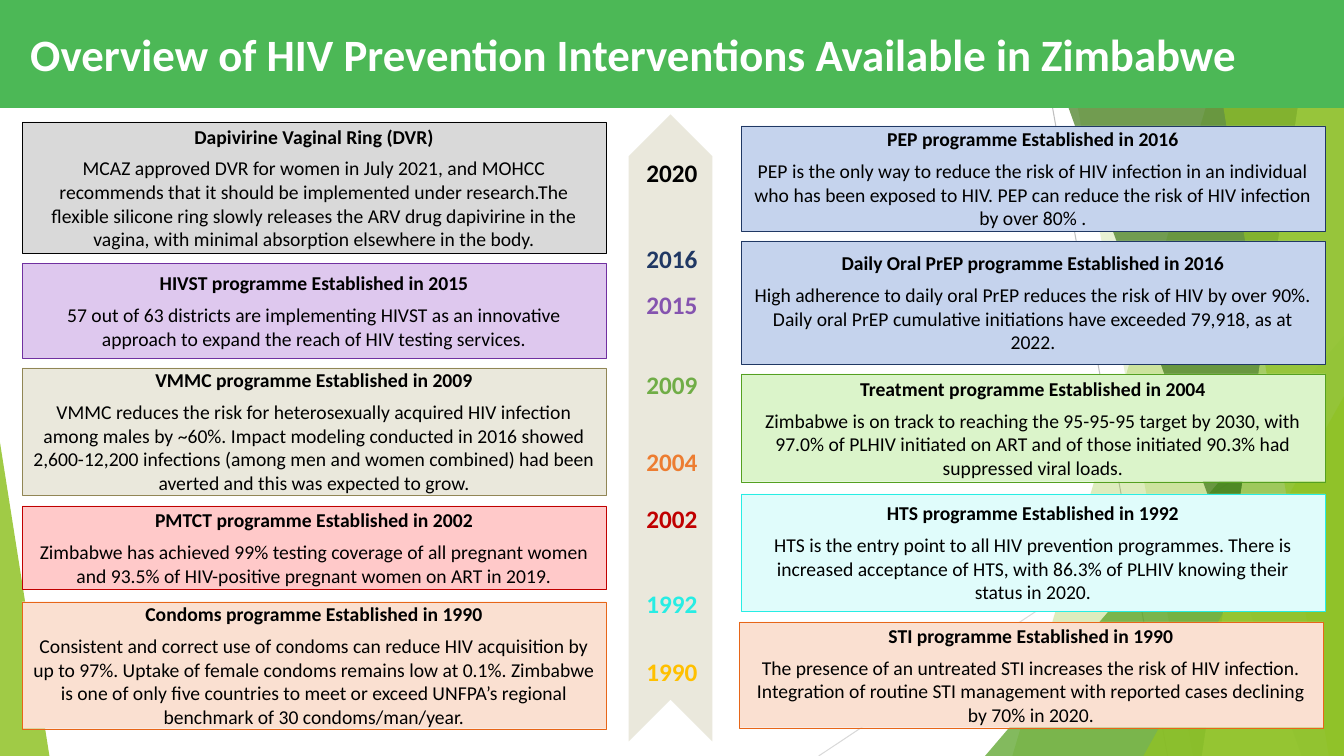
from lxml import etree
from pptx import Presentation
from pptx.dml.color import RGBColor
from pptx.enum.shapes import MSO_CONNECTOR, MSO_SHAPE as SHAPE
from pptx.enum.text import MSO_ANCHOR as ANCHOR, MSO_AUTO_SIZE, PP_ALIGN as ALIGN
from pptx.oxml.ns import qn
from pptx.util import Inches, Pt

FONT = "Calibri"
BEIGE = "EAE8DC"
CARD_W = 5.79

LINES = [
    (10.25, 0, 11.58, 7.5, "BFBFBF"),
    (13.33, 4.03, 8.12, 7.5, "D9D9D9"),
]
RIGHT_SHARDS = [
    (12.28, 10.04, "90C226", 30),
    (10.5, 11.83, "90C226", 20),
    (9.77, 3.33, "54A021", 72),
    (10.21, 12.91, "3F7819", 70),
    (13.03, 11.92, "C0E474", 70),
    (11.96, 13.18, "90C226", 65),
    (11.34, 3.93, "90C226", 80),
]
YEARS = [
    ("2020", 1.53, "000000"),
    ("2016", 2.38, "203864"),
    ("2015", 2.84, "8554AF"),
    ("2009", 3.63, "70AD47"),
    ("2004", 4.4, "ED7D31"),
    ("2002", 4.96, "C00000"),
    ("1992", 5.81, "27EDE4"),
    ("1990", 6.48, "FFC000"),
]
CARDS = [
    (0.22, 1.21, 1.3, "D9D9D9", "000000", "Dapivirine Vaginal Ring (DVR)",
     "MCAZ approved DVR for women in July 2021, and MOHCC recommends that it should be "
     "implemented under research.The flexible silicone ring slowly releases the ARV drug "
     "dapivirine in the vagina, with minimal absorption elsewhere in the body."),
    (0.22, 2.61, 0.94, "DEC8EE", "7030A0", "HIVST programme Established in 2015",
     "57 out of 63 districts are implementing HIVST as an innovative approach to expand "
     "the reach of HIV testing services."),
    (0.22, 3.65, 1.26, BEIGE, "918655", "VMMC programme Established in 2009",
     "VMMC reduces the risk for heterosexually acquired HIV infection among males by ~60%. "
     "Impact modeling conducted in 2016 showed 2,600-12,200 infections (among men and women "
     "combined) had been averted and this was expected to grow."),
    (0.22, 5.02, 0.83, "FFC9C9", "C00000", "PMTCT programme Established in 2002",
     "Zimbabwe has achieved 99% testing coverage of all pregnant women and 93.5% of "
     "HIV-positive pregnant women on ART in 2019."),
    (0.22, 5.97, 1.26, "FAE0D1", "E76618", "Condoms programme Established in 1990",
     "Consistent and correct use of condoms can reduce HIV acquisition by up to 97%. Uptake "
     "of female condoms remains low at 0.1%. Zimbabwe is one of only five countries to meet "
     "or exceed UNFPA’s regional benchmark of 30 condoms/man/year."),
    (7.35, 1.25, 1.04, "C5D3ED", "203864", "PEP programme Established in 2016",
     "PEP is the only way to reduce the risk of HIV infection in an individual who has been "
     "exposed to HIV. PEP can reduce the risk of HIV infection by over 80% ."),
    (7.35, 2.39, 1.22, "C5D3ED", "203864", "Daily Oral PrEP programme Established in 2016",
     "High adherence to daily oral PrEP reduces the risk of HIV by over 90%. Daily oral PrEP "
     "cumulative initiations have exceeded 79,918, as at 2022."),
    (7.35, 3.71, 1.07, "DBF4CA", "54A021", "Treatment programme Established in 2004",
     "Zimbabwe is on track to reaching the 95-95-95 target by 2030, with 97.0% of PLHIV "
     "initiated on ART and of those initiated 90.3% had suppressed viral loads."),
    (7.35, 4.9, 1.16, "E0FCFB", "27EDE4", "HTS programme Established in 1992",
     "HTS is the entry point to all HIV prevention programmes. There is increased acceptance "
     "of HTS, with 86.3% of PLHIV knowing their status in 2020."),
    (7.33, 6.17, 1.05, "FAE0D1", "E76618", "STI programme Established in 1990",
     "The presence of an untreated STI increases the risk of HIV infection. Integration of "
     "routine STI management with reported cases declining by 70% in 2020."),
]


def rgb(value):
    return RGBColor.from_string(value)


def paint(sp, fill, line=None, alpha=100):
    sp.shadow.inherit = False
    sp.fill.solid()
    sp.fill.fore_color.rgb = rgb(fill)
    if alpha < 100:
        clr = sp.fill._xPr.find(qn("a:solidFill"))[0]
        etree.SubElement(clr, qn("a:alpha")).set("val", str(alpha * 1000))
    if line:
        sp.line.color.rgb = rgb(line)
        sp.line.width = Pt(0.25)
    else:
        sp.line.fill.background()


def add_shape(s, kind, x, y, w, h, fill, line=None, alpha=100):
    sp = s.shapes.add_shape(kind, Inches(x), Inches(y), Inches(w), Inches(h))
    paint(sp, fill, line, alpha)
    return sp


def add_triangle(s, x, y, w, apex, fill, alpha):
    sp = add_shape(s, SHAPE.ISOSCELES_TRIANGLE, x, y, w, 7.5 - y, fill, alpha=alpha)
    sp.adjustments[0] = apex


def add_shard(s, top_x, bottom_x, fill, alpha):
    points = [(13.33, -0.01), (13.33, 7.5), (bottom_x, 7.5)]
    builder = s.shapes.build_freeform(Inches(top_x), Inches(-0.01))
    builder.add_line_segments([(Inches(x), Inches(y)) for x, y in points])
    paint(builder.convert_to_shape(), fill, alpha=alpha)


def add_line(s, x1, y1, x2, y2, color):
    c = s.shapes.add_connector(
        MSO_CONNECTOR.STRAIGHT, Inches(x1), Inches(y1), Inches(x2), Inches(y2))
    c.line.color.rgb = rgb(color)
    c.line.width = Pt(0.75)
    etree.SubElement(c._element.spPr, qn("a:effectLst"))


def write(p, text, size, color, bold=True, align=ALIGN.CENTER):
    p.text = text
    p.alignment = align
    p.font.name = FONT
    p.font.size = Pt(size)
    p.font.bold = bold
    p.font.color.rgb = rgb(color)


def add_backdrop(s):
    for line in LINES:
        add_line(s, *line)
    for x, second, fill, alpha in RIGHT_SHARDS:
        if second < 5:
            add_triangle(s, x, second, 13.33 - x, 1, fill, alpha)
        else:
            add_shard(s, x, second, fill, alpha)
    add_triangle(s, 0, 4.39, 0.49, 0, "90C226", 85)


def add_title(s, text):
    sp = s.shapes.title
    sp._element.getparent().append(sp._element)
    sp.left, sp.top, sp.width, sp.height = 0, 0, Inches(13.33), Inches(1.07)
    sp.fill.solid()
    sp.fill.fore_color.rgb = rgb("4CB856")
    tf = sp.text_frame
    tf.auto_size = MSO_AUTO_SIZE.NONE
    tf.vertical_anchor = ANCHOR.MIDDLE
    tf.margin_left = Inches(0.3)
    write(tf.paragraphs[0], text, 32, "FFFFFF", align=ALIGN.LEFT)


def add_year(s, year, y, color):
    tf = add_shape(s, SHAPE.RECTANGLE, 6.31, y, 0.71, 0.36, BEIGE).text_frame
    tf.margin_left = tf.margin_right = 0
    tf.vertical_anchor = ANCHOR.MIDDLE
    write(tf.paragraphs[0], year, 18, color)


def add_card(s, x, y, h, fill, line, heading, body):
    tf = add_shape(s, SHAPE.RECTANGLE, x, y, CARD_W, h, fill, line).text_frame
    tf.word_wrap = True
    tf.vertical_anchor = ANCHOR.MIDDLE
    p = tf.paragraphs[0]
    write(p, heading, 14, "000000")
    p.space_after = Pt(6)
    write(tf.add_paragraph(), body, 14, "000000", bold=False)


def main():
    prs = Presentation()
    prs.slide_width, prs.slide_height = Inches(13.33), Inches(7.5)
    s = prs.slides.add_slide(prs.slide_layouts[5])
    add_backdrop(s)
    add_title(s, "Overview of HIV Prevention Interventions Available in Zimbabwe")
    timeline = add_shape(s, SHAPE.CHEVRON, 3.54, 3.83, 6.22, 0.83, BEIGE)
    timeline.rotation = 270
    for year in YEARS:
        add_year(s, *year)
    for card in CARDS:
        add_card(s, *card)
    prs.save("out.pptx")


if __name__ == "__main__":
    main()
